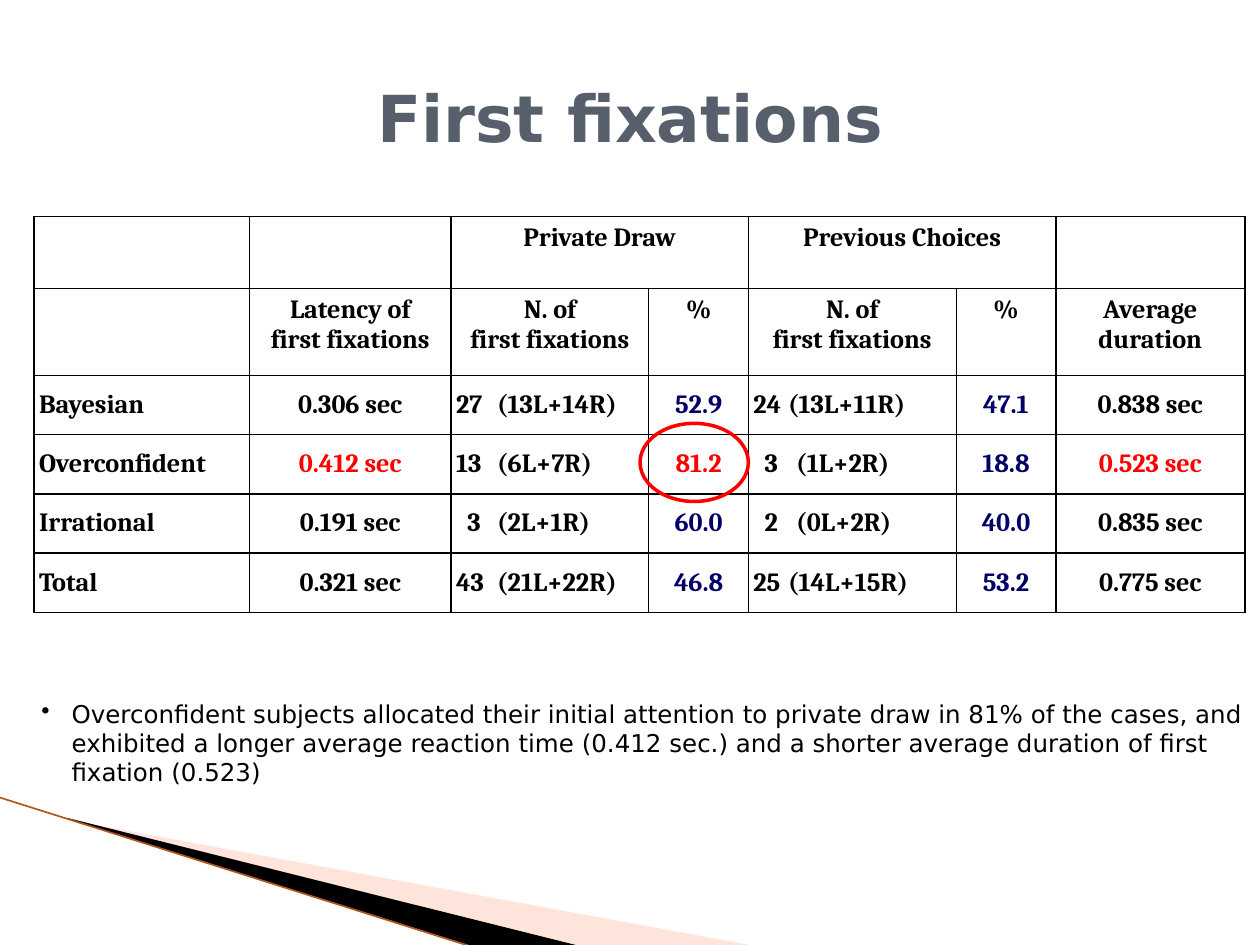
import dataclasses
import typing

import pptx
import pptx.dml.color
import pptx.enum.shapes
import pptx.enum.text
import pptx.oxml.ns
import pptx.util
from lxml import etree

ALIGN = pptx.enum.text.PP_ALIGN
ANCHOR = pptx.enum.text.MSO_ANCHOR
HUES = {
    "black": "000000", "slate": "575F6D", "navy": "000066", "red": "FF0000",
    "peach": "FFBCA5", "rust": "B0581C",
}
# The slide is a grid of 100 columns by 75 rows.
COLS, ROWS = 100, 75
WIDTH, HEIGHT = pptx.util.Inches(10), pptx.util.Inches(7.5)


@dataclasses.dataclass
class Font:
    name: str
    size: float
    hue: str = "black"
    bold: bool = False


@dataclasses.dataclass
class Wedge:
    hue: str
    points: list[tuple[float, float]]
    alpha: int = 100


@dataclasses.dataclass
class Group:
    name: str
    wait: str
    draw: str
    share: str
    past: str
    rest: str
    span: str
    reds: tuple[int, ...] = ()


WEDGES = [
    Wedge("peach", [(5.5, 65.1), (59.5, 75), (45.6, 75), (5.5, 65)], 40),
    Wedge("black", [(5.3, 64.9), (45.7, 75), (37.2, 75), (5.4, 65)]),
]
GROUPS = [
    Group("Bayesian", "0.306 sec", "27\t(13L+14R)", "52.9",
          "24\t(13L+11R)", "47.1", "0.838 sec"),
    Group("Overconfident", "0.412 sec", "13\t(6L+7R)", "81.2",
          "3\t(1L+2R)", "18.8", "0.523 sec", (1, 3, 6)),
    Group("Irrational", "0.191 sec", "3\t(2L+1R)", "60.0",
          "2\t(0L+2R)", "40.0", "0.835 sec"),
    Group("Total", "0.321 sec", "43\t(21L+22R)", "46.8",
          "25\t(14L+15R)", "53.2", "0.775 sec"),
]
COUNT = "N. of\nfirst fixations"
HEADS = [
    ["", "", "Private Draw", "", "Previous Choices", "", ""],
    ["", "Latency of\nfirst fixations", COUNT, "%", COUNT, "%",
     "Average\nduration"],
]
WIDE = [17.1, 16, 15.7, 7.9, 16.5, 7.9, 15]
TALL = [5.7, 6.9] + [4.7] * len(GROUPS)
TALLY = {2: 3.25, 4: 2.75}  # count columns, and where the brackets start
PARTS = (3, 5)  # percentage columns
CELL = Font("Cambria", 15, bold=True)


def col(n: float) -> int:
    return round(WIDTH * n / COLS)


def row(n: float) -> int:
    return round(HEIGHT * n / ROWS)


def box(x: float, y: float, w: float, h: float) -> tuple[int, ...]:
    return col(x), row(y), col(w), row(h)


def tint(hue: str) -> pptx.dml.color.RGBColor:
    return pptx.dml.color.RGBColor.from_string(HUES[hue])


def put(item: typing.Any, **vals: typing.Any) -> None:
    for key, val in vals.items():
        setattr(item, key, val)


def node(root: typing.Any, tag: str, **vals: str) -> typing.Any:
    return etree.SubElement(root, pptx.oxml.ns.qn(tag), vals)


def write(frame: typing.Any, text: str, font: Font, align: int) -> None:
    for i, line in enumerate(text.split("\n")):
        para = frame.add_paragraph() if i else frame.paragraphs[0]
        para.alignment = align
        run = para.add_run()
        run.text = line
        put(run.font, name=font.name, size=pptx.util.Pt(font.size),
            bold=font.bold)
        run.font.color.rgb = tint(font.hue)


def hang(para: typing.Any, left: int, first: int) -> typing.Any:
    """Indent a paragraph, its first line starting at another place."""
    props = para._p.get_or_add_pPr()
    put_in = {"marL": left, "indent": first - left}
    for key, val in put_in.items():
        props.set(key, str(val))
    return props


def label(slide: typing.Any, place: tuple[int, ...], text: str, font: Font,
          align: int) -> typing.Any:
    frame = slide.shapes.add_textbox(*place).text_frame
    put(frame, word_wrap=True, vertical_anchor=ANCHOR.MIDDLE)
    write(frame, text, font, align)
    return frame


def wedge(slide: typing.Any, item: Wedge) -> None:
    dots = [(col(x), row(y)) for x, y in item.points]
    path = slide.shapes.build_freeform(*dots[0])
    path.add_line_segments(dots[1:], close=True)
    shape = path.convert_to_shape()
    shape.shadow.inherit = False
    shape.fill.solid()
    shape.fill.fore_color.rgb = tint(item.hue)
    shape.line.fill.background()
    if item.alpha < 100:
        hue = shape._element.spPr.find(".//" + pptx.oxml.ns.qn("a:srgbClr"))
        node(hue, "a:alpha", val=str(item.alpha * 1000))


def edge(slide: typing.Any) -> None:
    line = slide.shapes.add_connector(
        pptx.enum.shapes.MSO_CONNECTOR.STRAIGHT,
        col(0), row(63.3), col(37), row(75))
    put(line.line, width=pptx.util.Pt(0.95))
    line.line.color.rgb = tint("rust")
    node(line._element.spPr, "a:effectLst")


def frame_cell(cell: typing.Any, r: int, c: int) -> None:
    """Rule the four sides, thinner beside the counts and at the foot."""
    thin = {"R": r > 0 and c in TALLY, "L": r > 0 and c in PARTS,
            "T": False, "B": r == len(TALL) - 1}
    props = cell._tc.get_or_add_tcPr()
    for side in "LRTB":
        wide = pptx.util.Pt(0.75 if thin[side] else 1)
        line = node(props, "a:ln" + side, w=str(wide))
        node(node(line, "a:solidFill"), "a:srgbClr", val=HUES["black"])
    cell.fill.background()


def fill_cell(cell: typing.Any, text: str, r: int, c: int) -> None:
    frame_cell(cell, r, c)
    if r < len(HEADS):
        write(cell.text_frame, text, CELL, ALIGN.CENTER)
        return
    put(cell, vertical_anchor=ANCHOR.MIDDLE, margin_left=col(0.4),
        margin_right=col(0.4), margin_top=row(0.8), margin_bottom=row(0.8))
    red = c in GROUPS[r - len(HEADS)].reds
    hue = "red" if red else "navy" if c in PARTS else "black"
    align = ALIGN.LEFT if c == 0 or c in TALLY else ALIGN.CENTER
    write(cell.text_frame, text, dataclasses.replace(CELL, hue=hue), align)
    if c in TALLY:
        short = text.index("\t") == 1
        first = col(0.9) if short else 0
        left = col(3.4) if short and c == 4 else col(TALLY[c])
        hang(cell.text_frame.paragraphs[0], left, first)


def grid(slide: typing.Any) -> None:
    place = box(2.7, 17.2, sum(WIDE), sum(TALL))
    table = slide.shapes.add_table(len(TALL), len(WIDE), *place).table
    put(table, first_row=False, horz_banding=False)
    for part, size in zip(table.columns, WIDE):
        part.width = col(size)
    for part, size in zip(table.rows, TALL):
        part.height = row(size)
    data = HEADS + [list(dataclasses.astuple(g))[:-1] for g in GROUPS]
    for r, line in enumerate(data):
        for c, text in enumerate(line):
            fill_cell(table.cell(r, c), text, r, c)
    for c in TALLY:
        table.cell(0, c).merge(table.cell(0, c + 1))


def ring(slide: typing.Any) -> None:
    oval = slide.shapes.add_shape(
        pptx.enum.shapes.MSO_SHAPE.OVAL, *box(50.8, 33.6, 8.6, 6.2))
    oval.shadow.inherit = False
    oval.fill.background()
    oval.line.color.rgb = tint("red")
    oval.line.width = pptx.util.Pt(2)


def main() -> None:
    deck = pptx.Presentation()
    put(deck, slide_width=WIDTH, slide_height=HEIGHT)
    slide = deck.slides.add_slide(deck.slide_layouts[6])
    for item in WEDGES:
        wedge(slide, item)
    edge(slide)
    label(slide, box(5, 3, 90, 12.5), "First fixations",
          Font("DejaVu Sans", 37, "slate", True), ALIGN.CENTER)
    grid(slide)
    note = label(
        slide, box(2.3, 54.9, 97.7, 8.1),
        "Overconfident subjects allocated their initial attention to private "
        "draw in 81% of the cases, and exhibited a longer average reaction "
        "time (0.412 sec.) and a shorter average duration of first fixation "
        "(0.523)", Font("DejaVu Sans", 14), ALIGN.LEFT)
    node(hang(note.paragraphs[0], col(2.4), 0), "a:buChar", char="•")
    ring(slide)
    deck.save("out.pptx")


if __name__ == "__main__":
    main()
